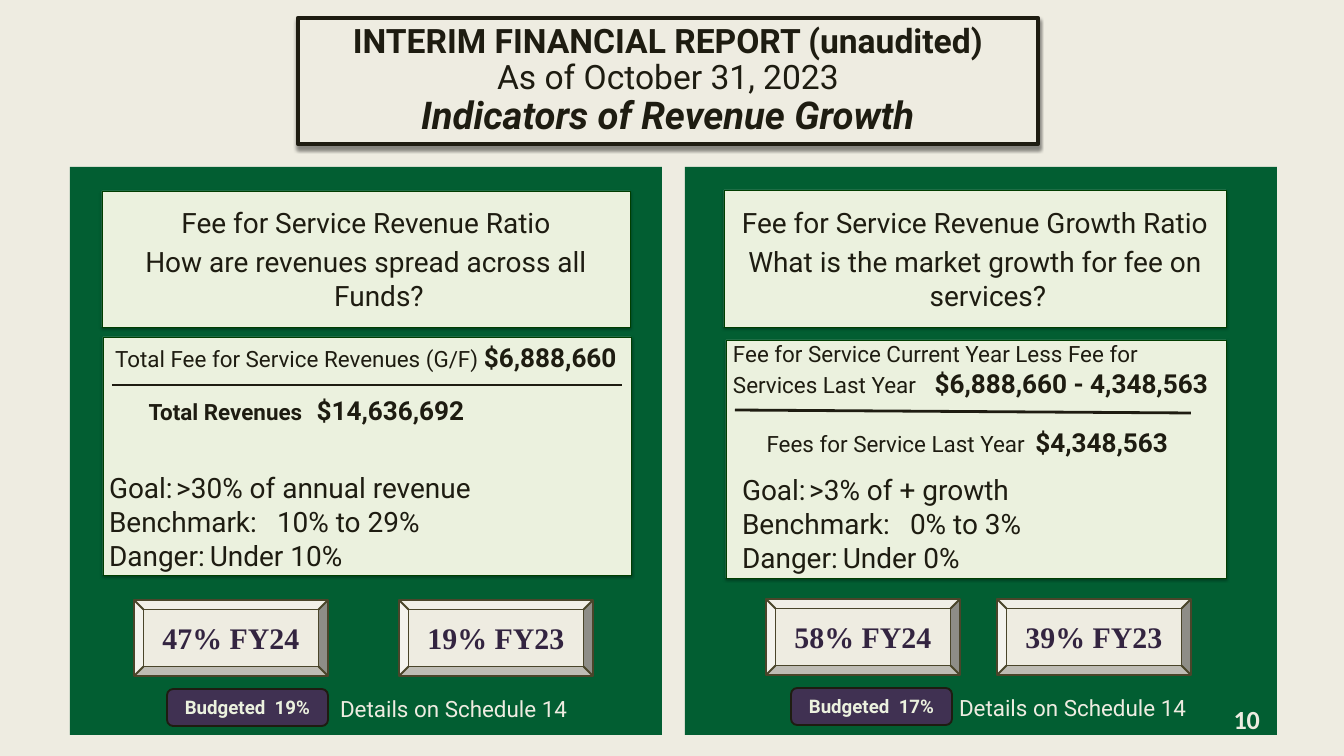
from lxml import etree
from pptx import Presentation
from pptx.dml.color import RGBColor
from pptx.enum.shapes import MSO_CONNECTOR, MSO_SHAPE
from pptx.enum.text import MSO_ANCHOR, MSO_AUTO_SIZE, PP_ALIGN
from pptx.oxml.ns import qn
from pptx.util import Pt

EMU_PER_PX = 914400 / 67.2
STRAIGHT = MSO_CONNECTOR.STRAIGHT
RECTANGLE, ROUNDED, BEVEL = (MSO_SHAPE.RECTANGLE, MSO_SHAPE.ROUNDED_RECTANGLE,
                             MSO_SHAPE.BEVEL)
LEFT, CENTER, RIGHT = PP_ALIGN.LEFT, PP_ALIGN.CENTER, PP_ALIGN.RIGHT
TOP, MIDDLE = MSO_ANCHOR.TOP, MSO_ANCHOR.MIDDLE
NO_AUTOFIT = MSO_AUTO_SIZE.NONE

CREAM = RGBColor(0xEE, 0xEC, 0xE1)
INK = RGBColor(0x1E, 0x1C, 0x11)
GREEN = RGBColor(0x02, 0x5E, 0x32)
DARK_GREEN = RGBColor(0x00, 0x3E, 0x00)
PALE_GREEN = RGBColor(0xEB, 0xF1, 0xDE)
PURPLE = RGBColor(0x40, 0x31, 0x52)
DARK_PURPLE = RGBColor(0x33, 0x24, 0x40)
OLIVE = RGBColor(0x4A, 0x45, 0x2A)


def px(value):
    return round(value * EMU_PER_PX)


def place(shape, box):
    shape.left, shape.top, shape.width, shape.height = map(px, box)


def write(shape, paragraphs, size=30, font="Roboto", color=INK, bold=False,
          align=LEFT, anchor=TOP, insets=(7, 3, 7, 3), before=(), hanging=0,
          line_spacing=None, tabs=()):
    """Write paragraphs, each a list of (text, overrides) runs."""
    frame = shape.text_frame
    frame.word_wrap = True
    frame.auto_size = NO_AUTOFIT
    frame.vertical_anchor = anchor
    (frame.margin_left, frame.margin_top,
     frame.margin_right, frame.margin_bottom) = map(px, insets)
    for index, runs in enumerate(paragraphs):
        paragraph = frame.add_paragraph() if index else frame.paragraphs[0]
        paragraph.alignment = align
        paragraph.space_before = Pt(before[index] if before else 0)
        if line_spacing:
            paragraph.line_spacing = line_spacing
        properties = paragraph._p.get_or_add_pPr()
        properties.set("marL", str(px(hanging)))
        properties.set("indent", str(px(-hanging)))
        etree.SubElement(properties, qn("a:buNone"))
        if tabs:
            tab_list = etree.SubElement(properties, qn("a:tabLst"))
            for position, kind in tabs:
                etree.SubElement(tab_list, qn("a:tab"),
                                 pos=str(px(position)), algn=kind)
        for text, overrides in runs:
            run = paragraph.add_run()
            run.text = text
            run.font.name = font
            run.font.size = Pt(overrides.get("size", size))
            run.font.bold = overrides.get("bold", bold)
            run.font.italic = overrides.get("italic", False)
            run.font.color.rgb = color


def paint(shape, fill, line=None, width=0.75):
    shape.fill.solid()
    shape.fill.fore_color.rgb = fill
    if line is None:
        shape.line.fill.background()
    else:
        shape.line.color.rgb = line
        shape.line.width = Pt(width)


def add_box(slide, kind, box, fill, line=None, width=0.75):
    shape = slide.shapes.add_shape(kind, *map(px, box))
    shape.shadow.inherit = False
    paint(shape, fill, line, width)
    return shape


def add_shadow(shape, opacity, blur, distance):
    shape.shadow.inherit = False
    effects = shape.element.spPr.find(qn("a:effectLst"))
    shadow = etree.SubElement(effects, qn("a:outerShdw"), blurRad=str(Pt(blur)),
                              dist=str(Pt(distance)), dir="5400000", rotWithShape="0")
    color = etree.SubElement(shadow, qn("a:srgbClr"), val="000000")
    etree.SubElement(color, qn("a:alpha"), val=str(opacity * 1000))


def add_card(slide, box):
    card = add_box(slide, RECTANGLE, box, PALE_GREEN, DARK_GREEN)
    add_shadow(card, 35, 3.1, 1.8)
    return card


def add_text(slide, box, paragraphs, **style):
    text_box = slide.shapes.add_textbox(*map(px, box))
    write(text_box, paragraphs, **style)


def add_fraction_bar(slide, start, end):
    line = slide.shapes.add_connector(STRAIGHT, *map(px, start + end))
    line.line.color.rgb = INK
    line.line.width = Pt(3)
    etree.SubElement(line._element.spPr, qn("a:effectLst"))


def add_heading_card(slide, box, name, question):
    write(add_card(slide, box), [[(name, {})], [(question, {})]],
          align=CENTER, anchor=MIDDLE, before=(6, 6), hanging=26)


def fill_targets(placeholder, box, targets, tab):
    """Put the target list in a body placeholder, in front of its card."""
    place(placeholder, box)
    names = ("Goal:", "Benchmark:", "Danger:")
    write(placeholder, [[(f"{name}\t{target}", {})]
                        for name, target in zip(names, targets)],
          tabs=[(tab, "l")])
    placeholder.element.getparent().append(placeholder.element)


def add_result(slide, left, top, text):
    bevel = add_box(slide, BEVEL, (left, top, 194, 76), CREAM, OLIVE, 2)
    write(bevel, [[(text, {})]], size=32, font="Times New Roman",
          color=DARK_PURPLE, bold=True, align=CENTER, anchor=MIDDLE)


def add_footer(slide, left, top, budget, details_left):
    badge = add_box(slide, ROUNDED, (left, top, 161, 37), PURPLE, INK, 2)
    write(badge, [[(f"Budgeted  {budget}", {})]], size=20, color=PALE_GREEN,
          bold=True, align=CENTER, anchor=MIDDLE)
    add_text(slide, (details_left, top + 3, 260, 34),
             [[("Details on Schedule 14", {})]], size=24, color=CREAM)


def main():
    presentation = Presentation()
    presentation.slide_width, presentation.slide_height = px(1344), px(756)
    slide = presentation.slides.add_slide(presentation.slide_layouts[3])
    slide.background.fill.solid()
    slide.background.fill.fore_color.rgb = CREAM
    title, left_body, right_body = slide.placeholders
    amount = {"size": 28, "bold": True}

    # Title
    place(title, (298, 18, 740, 126))
    paint(title, CREAM, INK, 4.5)
    add_shadow(title, 43, 4, 4)
    write(title, [[("INTERIM FINANCIAL REPORT (unaudited)", {"bold": True})],
                  [("As of October 31, 2023", {})],
                  [("Indicators of Revenue Growth",
                    {"size": 41, "bold": True, "italic": True})]],
          size=36, align=CENTER, anchor=MIDDLE, insets=(0, 0, 0, 0), line_spacing=0.9)

    # Green panels
    for left in (70, 685):
        add_box(slide, RECTANGLE, (left, 167, 592, 568), GREEN)

    # Revenue ratio
    add_heading_card(slide, (102, 191, 528, 136), "Fee for Service Revenue Ratio",
                     "How are revenues spread across all Funds?")
    formula = add_card(slide, (103, 337, 528, 238))
    write(formula,
          [[("Total Fee for Service Revenues (G/F) ", {}), ("$6,888,660", amount)],
           [("\tTotal Revenues\t", {"bold": True}), ("$14,636,692", amount)]],
          size=24, insets=(12, 4, 7, 3), before=(0, 24),
          tabs=[(72, "l"), (501, "r")])
    add_fraction_bar(slide, (112, 385), (622, 385))
    fill_targets(left_body, (102, 468, 528, 109),
                 (">30% of annual revenue", "10% to 29%", "Under 10%"), 215)

    # Revenue growth ratio
    add_heading_card(slide, (724, 190, 502, 137), "Fee for Service Revenue Growth Ratio",
                     "What is the market growth for fee on services?")
    add_card(slide, (726, 340, 500, 238))
    add_text(slide, (720, 337, 507, 124),
             [[("Fee for Service Current Year Less Fee for Services Last Year\t", {}),
               ("$6,888,660 - 4,348,563", amount)],
              [("\tFees for Service Last Year\t", {}), ("$4,348,563", amount)]],
             size=24, insets=(13, 3, 7, 3), before=(0, 30),
             tabs=[(22, "l"), (205, "l"), (298, "l")])
    add_fraction_bar(slide, (735, 410), (1191, 413))
    fill_targets(right_body, (735, 470, 474, 109),
                 (">3% of + growth", "0% to 3%", "Under 0%"), 183)

    # Results and budget
    for left, top, text in ((134, 600, "47% FY24"), (399, 600, "19% FY23"),
                            (766, 599, "58% FY24"), (997, 599, "39% FY23")):
        add_result(slide, left, top, text)
    add_footer(slide, 167, 689, "19%", 333)
    add_footer(slide, 791, 688, "17%", 952)

    # Page number
    add_text(slide, (1232, 703, 28, 32), [[("10", {})]], size=28, font="Calibri",
             color=CREAM, bold=True, align=RIGHT, insets=(0, 0, 0, 0))

    presentation.save("out.pptx")


if __name__ == "__main__":
    main()
